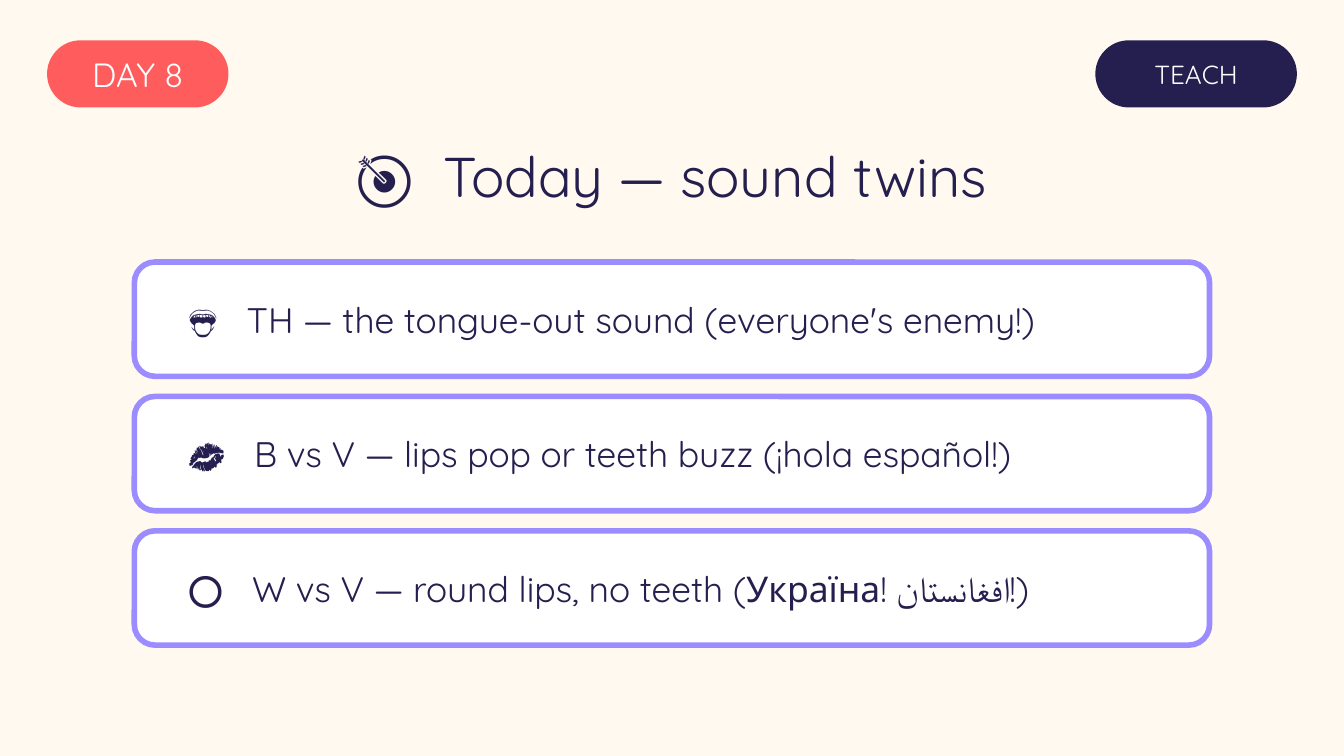
from lxml import etree
from pptx import Presentation, util as u
from pptx.dml.color import RGBColor
from pptx.enum import lang, shapes, text
from pptx.oxml.ns import qn

COLORS = {"cream": "FFF9EF", "coral": "FF5D5D", "navy": "241F4E",
          "white": "FFFFFF", "violet": "9B8CFF"}
CELL = 0.05  # inches per grid column and row
COLUMNS = 200
SPACE = 0.27  # width of a space, as a share of the text size
SOUNDS = [
    ("👅", "TH — the tongue-out sound (everyone's enemy!)"),
    ("💋", "B vs V — lips pop or teeth buzz (¡hola español!)"),
    ("⭕", "W vs V — round lips, no teeth (Україна! افغانستان!)"),
]


def color(name):
    return RGBColor.from_string(COLORS[name])


def grid(count):
    return u.Inches(round(count * CELL, 2))


def add_span(para, words, size, ink, font, tracking=0):
    span = para.add_run()
    span.text = words
    span.font.name = font
    span.font.size = u.Pt(size)
    span.font.color.rgb = color(ink)
    span.font.language_id = lang.MSO_LANGUAGE_ID.ENGLISH_US
    props = span._r.get_or_add_rPr()
    for script in ("a:ea", "a:cs"):
        etree.SubElement(props, qn(script)).set("typeface", font)
    if tracking:
        props.set("spc", str(round(tracking * 100)))


def write(box, words, size, ink="navy", align=text.PP_ALIGN.LEFT,
          font="Quicksand", margin=None, icon=None, gap=0):
    """Write one paragraph; gap widens the space after the icon."""
    frame = box.text_frame
    frame.word_wrap = True
    frame.vertical_anchor = text.MSO_ANCHOR.MIDDLE
    if margin is not None:
        frame.margin_left = frame.margin_right = margin
        frame.margin_top = frame.margin_bottom = margin
    para = frame.paragraphs[0]
    para.alignment = align
    if icon:
        lead = icon + " "
        add_span(para, lead, size, ink, font, gap * SPACE * size / len(lead))
    add_span(para, words, size, ink, font)


class Lesson:
    """Slide style; every length is counted in grid columns and rows."""

    def __init__(self, deck):
        self.page = deck.slides.add_slide(deck.slide_layouts[6])
        fill = self.page.background.fill
        fill.solid()
        fill.fore_color.rgb = color("cream")

    def panel(self, area, fill, corner, border=None):
        box = self.page.shapes.add_shape(
            shapes.MSO_SHAPE.ROUNDED_RECTANGLE, *map(grid, area))
        box.adjustments[0] = corner
        box.shadow.inherit = False
        box.fill.solid()
        box.fill.fore_color.rgb = color(fill)
        if border:
            box.line.color.rgb = color(border)
            box.line.width = u.Pt(3)
        else:
            box.line.fill.background()

    def label(self, area, words, size, **style):
        box = self.page.shapes.add_textbox(*map(grid, area))
        write(box, words, size, **style)

    def pill(self, area, words, size, fill):
        self.panel(area, fill, corner=0.5)
        self.label(area, words, size, ink="white", margin=0,
                   align=text.PP_ALIGN.CENTER)

    def card(self, area, icon, words):
        left, top, width, height = area
        self.panel(area, "white", corner=0.18, border="violet")
        self.label((left + 6, top, width - 8, height), words, 19,
                   icon=icon, gap=2)


def main():
    deck = Presentation()
    deck.slide_width = u.Inches(10)
    deck.slide_height = deck.slide_width * 9 // 16
    lesson = Lesson(deck)

    # Header pills
    lesson.pill((7, 6, 27, 10), "DAY 8", 18, "coral")
    lesson.pill((163, 6, 30, 10), "TEACH", 14, "navy")

    # Title
    lesson.label((0, 19, COLUMNS, 14), "Today — sound twins", 30,
                 align=text.PP_ALIGN.CENTER, icon="🎯", gap=1)

    # Sound cards
    for row, (icon, words) in enumerate(SOUNDS):
        lesson.card((20, 39 + 20 * row, 160, 17), icon, words)

    deck.save("out.pptx")


if __name__ == "__main__":
    main()
